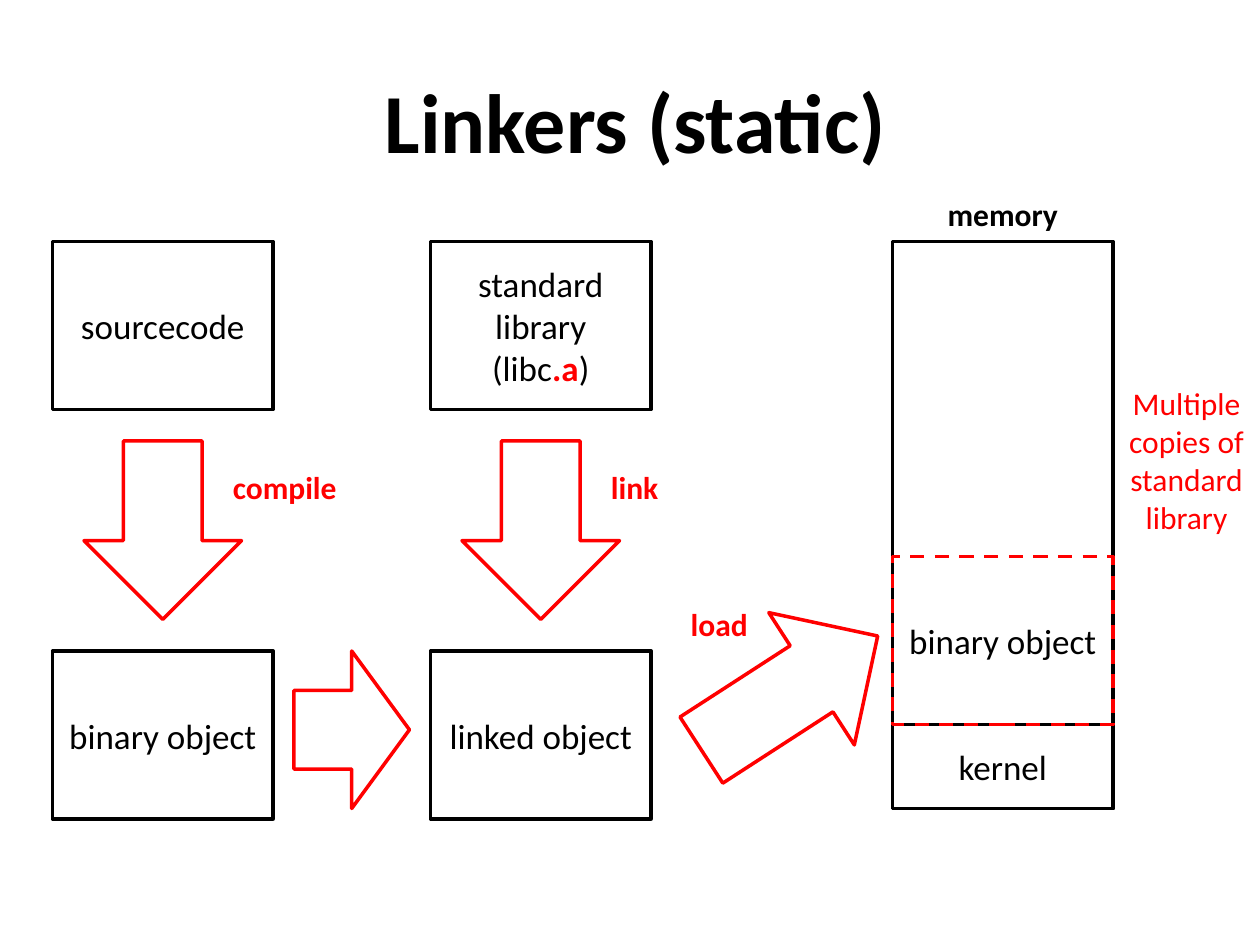
from pptx import Presentation
from pptx import util as u
from pptx.dml.color import RGBColor
from pptx.enum import dml, shapes, text

PX = 7620  # EMU in one px, 120 px to the inch
FONT = "Calibri"
HUES = {"ink": "000000", "mark": "FF0000"}
BOX_W, BOX_H = 210, 160
COL_A, COL_B, COL_M = 50, 410, 850  # left edges of the columns
TOP, LOW = 230, 620  # top edges of the rows


def hue(name):
    return RGBColor.from_string(HUES[name])


def place(slot, left, top, wide, high):
    slot.left, slot.top = left * PX, top * PX
    slot.width, slot.height = wide * PX, high * PX


def style(run, size, tint="ink", bold=False):
    font = run.font
    font.name, font.size, font.bold = FONT, u.Pt(size), bold
    font.color.rgb = hue(tint)


def fill_text(frame, words, size, tint="ink", bold=False,
              align=text.PP_ALIGN.CENTER, anchor=text.MSO_ANCHOR.TOP):
    frame.text = words
    frame.word_wrap = True
    frame.vertical_anchor = anchor
    for para in frame.paragraphs:
        para.alignment = align
        for run in para.runs:
            style(run, size, tint, bold)


def add_form(slide, kind, area, tint):
    form = slide.shapes.add_shape(kind, *[n * PX for n in area])
    form.shadow.inherit = False
    form.fill.background()
    form.line.color.rgb = hue(tint)
    form.line.width = u.Pt(2)
    return form


def add_box(slide, left, top, high=BOX_H, words="", tint="ink"):
    area = (left, top, BOX_W, high)
    box = add_form(slide, shapes.MSO_SHAPE.RECTANGLE, area, tint)
    if words:
        fill_text(box.text_frame, words, 20, anchor=text.MSO_ANCHOR.MIDDLE)
    return box


def add_arrow(slide, left, top, high, turn=0):
    area = (left, top, 150, high)
    arrow = add_form(slide, shapes.MSO_SHAPE.DOWN_ARROW, area, "mark")
    arrow.rotation = turn


def add_label(slide, area, words, tint="mark", bold=True,
              align=text.PP_ALIGN.CENTER):
    label = slide.shapes.add_textbox(*[n * PX for n in area])
    fill_text(label.text_frame, words, 18, tint, bold, align)


def main():
    deck = Presentation()
    deck.slide_width, deck.slide_height = 1200 * PX, 900 * PX
    slide = deck.slides.add_slide(deck.slide_layouts[5])

    # Title
    title = slide.shapes.title
    place(title, 70, 60, 1070, 109)
    fill_text(title.text_frame, "Linkers (static)", 48, bold=True)

    # Inputs above, results below, one step between
    steps = [(COL_A, "sourcecode", "compile", "binary object"),
             (COL_B, "standard\nlibrary", "link", "linked object")]
    for left, source, step, result in steps:
        box = add_box(slide, left, TOP, words=source)
        add_box(slide, left, LOW, words=result)
        add_arrow(slide, left + 30, 420, 170)
        add_label(slide, (left + 160, 440, 130, 48), step,
                  align=text.PP_ALIGN.LEFT)

    # File name with its suffix marked, in the library box
    para = box.text_frame.add_paragraph()
    para.alignment = text.PP_ALIGN.CENTER
    for part, tint in (("(libc", "ink"), (".a", "mark"), (")", "ink")):
        run = para.add_run()
        run.text = part
        style(run, 20, tint, tint == "mark")

    # Binary object to linked object, then into memory
    add_arrow(slide, 260, 640, 110, 270)
    add_arrow(slide, 677, 560, 200, 237.1)
    add_label(slide, (620, 570, 130, 50), "load")

    # Memory column
    add_box(slide, COL_M, TOP, 540)
    add_label(slide, (COL_M, 180, BOX_W, 48), "memory", "ink")
    add_box(slide, COL_M, 690, 80, "kernel")
    loaded = add_box(slide, COL_M, 530, words="binary object", tint="mark")
    loaded.line.dash_style = dml.MSO_LINE.DASH
    add_label(slide, (1060, 360, 140, 157),
              "Multiple copies of standard library", bold=False)

    deck.save("out.pptx")


if __name__ == "__main__":
    main()
